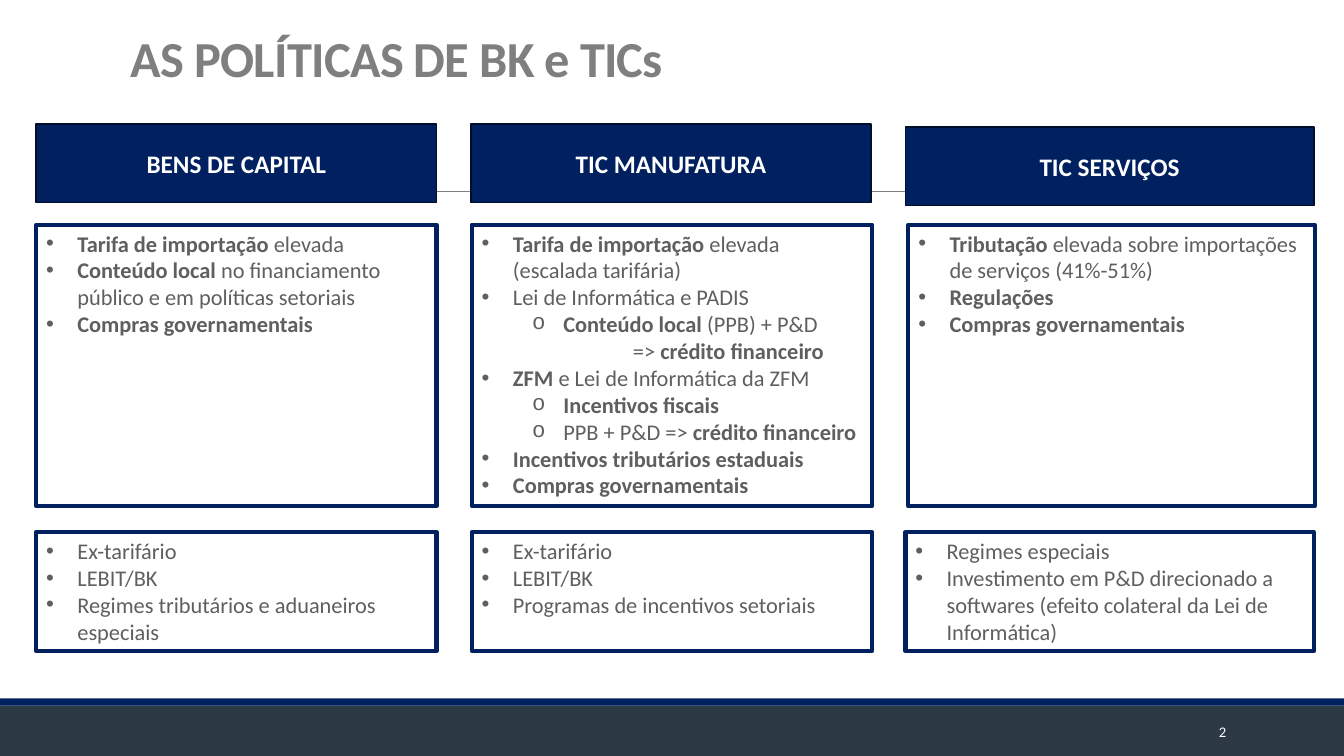
"""Build the slide on capital goods and ICT policies."""
from lxml import etree
from pptx import Presentation
from pptx.dml.color import RGBColor
from pptx.enum.shapes import MSO_CONNECTOR, MSO_SHAPE
from pptx.enum.text import MSO_ANCHOR, MSO_AUTO_SIZE, PP_ALIGN
from pptx.oxml.ns import qn
from pptx.util import Inches, Pt

NAVY = "002060"
BULLETS = {
    "•": {"level": 0, "indent": 0.31, "hanging": 0.31, "font": "Arial"},
    "o": {"level": 1, "indent": 0.81, "hanging": 0.31, "font": "Courier New"},
    "": {"level": 3, "indent": 1.5, "hanging": 0, "font": None},
}
HEADER = {"size": Pt(18), "bold": True, "color": "FFFFFF"}
BODY = {"size": Pt(16), "bold": False, "color": "5F5F5F"}

COLUMNS = [
    {
        "title": "BENS DE CAPITAL",
        "header": (0.36, 1.23, 3.97, 0.78),
        "policies": (0.36, 2.23, 3.97, 2.79),
        "regimes": (0.36, 5.28, 3.97, 1.18),
        "policy_items": [
            ("•", "**Tarifa de importação **elevada"),
            ("•", "**Conteúdo local **no financiamento público e em políticas setoriais"),
            ("•", "**Compras governamentais**"),
        ],
        "regime_items": [
            ("•", "Ex-tarifário"),
            ("•", "LEBIT/BK"),
            ("•", "Regimes tributários e aduaneiros especiais"),
        ],
    },
    {
        "title": "TIC MANUFATURA",
        "header": (4.67, 1.23, 3.97, 0.78),
        "policies": (4.68, 2.23, 3.97, 2.79),
        "regimes": (4.68, 5.28, 3.97, 1.18),
        "policy_items": [
            ("•", "**Tarifa de importação **elevada (escalada tarifária)"),
            ("•", "Lei de Informática e PADIS"),
            ("o", "**Conteúdo local **(PPB) + P&D"),
            ("", "=> **crédito financeiro**"),
            ("•", "**ZFM** e Lei de Informática da ZFM"),
            ("o", "**Incentivos fiscais**"),
            ("o", "PPB + P&D => **crédito financeiro**"),
            ("•", "**Incentivos tributários estaduais**"),
            ("•", "**Compras governamentais**"),
        ],
        "regime_items": [
            ("•", "Ex-tarifário"),
            ("•", "LEBIT/BK"),
            ("•", "Programas de incentivos setoriais"),
        ],
    },
    {
        "title": "TIC SERVIÇOS",
        "header": (8.98, 1.26, 4.05, 0.78),
        "policies": (9.01, 2.23, 4.03, 2.79),
        "regimes": (8.98, 5.28, 4.05, 1.18),
        "policy_items": [
            ("•", "**Tributação** elevada sobre importações de serviços (41%-51%)"),
            ("•", "**Regulações**"),
            ("•", "**Compras governamentais**"),
        ],
        "regime_items": [
            ("•", "Regimes especiais"),
            ("•", "Investimento em P&D direcionado a softwares "
                  "(efeito colateral da Lei de Informática)"),
        ],
    },
]

prs = Presentation()
prs.slide_width, prs.slide_height = Inches(13.33), Inches(7.5)
slide = prs.slides.add_slide(prs.slide_layouts[6])


def add_box(box, fill=None, line=None, width=0):
    sp = slide.shapes.add_shape(MSO_SHAPE.RECTANGLE, *[Inches(v) for v in box])
    sp.shadow.inherit = False
    for part, color in ((sp.fill, fill), (sp.line.fill, line)):
        if color:
            part.solid()
            part.fore_color.rgb = RGBColor.from_string(color)
        else:
            part.background()
    if line:
        sp.line.width = Pt(width)
    return sp


def add_run(p, text, style):
    r = p.add_run()
    r.text = text
    r.font.name = "Calibri"
    for name, value in style.items():
        if name == "color":
            r.font.color.rgb = RGBColor.from_string(value)
        else:
            setattr(r.font, name, value)
    return r


add_box((0, 7, 13.33, 0.5), "2C3843")
add_box((0, 6.93, 13.33, 0.07), NAVY)
rule = slide.shapes.add_connector(
    MSO_CONNECTOR.STRAIGHT, Inches(1.31), Inches(1.9), Inches(12.21), Inches(1.9))
rule.line.color.rgb = RGBColor.from_string("808080")
rule.line.width = Pt(0.5)
etree.SubElement(rule._element.spPr, qn("a:effectLst"))

title = slide.shapes.add_textbox(Inches(1.2), Inches(0.31), Inches(11), Inches(0.78))
title.text_frame.word_wrap = True
p = title.text_frame.paragraphs[0]
p.line_spacing = 0.85
r = add_run(p, "AS POLÍTICAS DE BK e TICs",
            {"size": Pt(36), "bold": True, "color": "7F7F7F"})
r.font._element.set("spc", "-50")

for column in COLUMNS:
    sp = add_box(column["header"], NAVY, "000E2A", 1.25)
    tf = sp.text_frame
    tf.vertical_anchor = MSO_ANCHOR.MIDDLE
    p = tf.paragraphs[0]
    p.alignment = PP_ALIGN.CENTER
    add_run(p, column["title"], HEADER)

    for place, content in (("policies", "policy_items"), ("regimes", "regime_items")):
        tf = add_box(column[place], line=NAVY, width=3).text_frame
        tf.word_wrap = True
        tf.vertical_anchor = MSO_ANCHOR.TOP
        tf.auto_size = MSO_AUTO_SIZE.SHAPE_TO_FIT_TEXT
        for i, (mark, text) in enumerate(column[content]):
            p = tf.add_paragraph() if i else tf.paragraphs[0]
            bullet = BULLETS[mark]
            p.alignment = PP_ALIGN.LEFT
            p.level = bullet["level"]
            pPr = p._p.get_or_add_pPr()
            pPr.set("marL", str(Inches(bullet["indent"])))
            pPr.set("indent", str(-Inches(bullet["hanging"])))
            if mark:
                etree.SubElement(pPr, qn("a:buFont")).set("typeface", bullet["font"])
                etree.SubElement(pPr, qn("a:buChar")).set("char", mark)
            for j, piece in enumerate(text.split("**")):
                if piece:
                    add_run(p, piece, {**BODY, "bold": j % 2 == 1})

number = slide.shapes.add_textbox(Inches(10.83), Inches(7.06), Inches(1.43), Inches(0.4))
tf = number.text_frame
tf.word_wrap = True
tf.vertical_anchor = MSO_ANCHOR.MIDDLE
p = tf.paragraphs[0]
p.alignment = PP_ALIGN.RIGHT
add_run(p, "2", {"size": Pt(10.5), "color": "FFFFFF"})

prs.save("out.pptx")
